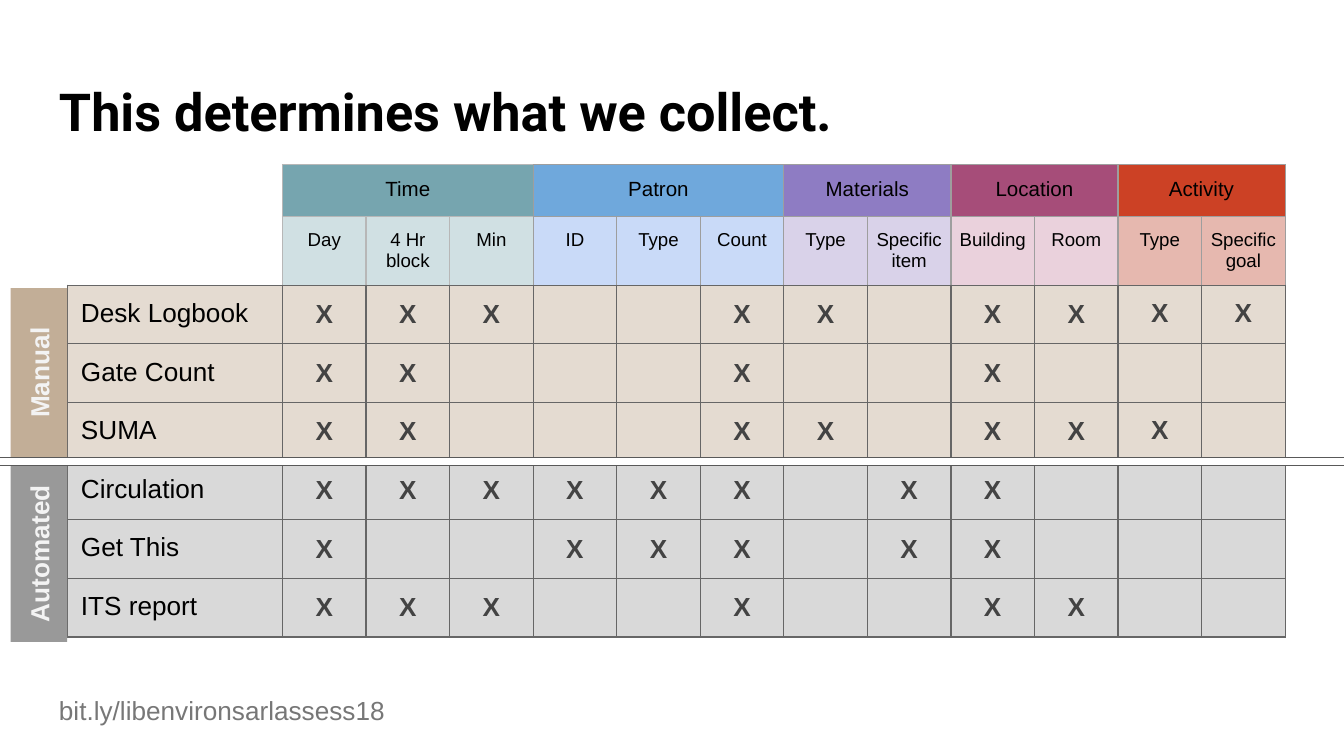
from lxml.etree import SubElement
from pptx import Presentation
from pptx.dml.color import RGBColor as RGB
from pptx.enum.shapes import MSO_SHAPE as Shape
from pptx.enum.text import MSO_ANCHOR as Anchor, PP_ALIGN as Align
from pptx.oxml import parse_xml
from pptx.oxml.ns import nsdecls, qn
from pptx.util import Inches, Pt

COLORS = {
    "black": "000000", "white": "FFFFFF", "mark": "434343", "footer": "777777",
    "tab_text": "F3F3F3", "tan": "B69E83", "gray": "D9D9D9", "dark_gray": "999999",
    "grid": "666666", "header_grid": "9E9E9E", "time_grid": "B7B7B7", "rule": "595959",
    "time": "76A5AF", "time_light": "D0E0E3", "patron": "6FA8DC", "patron_light": "C9DAF8",
    "materials": "8E7CC3", "materials_light": "D9D2E9",
    "location": "A64D79", "location_light": "EAD1DC",
    "activity": "CC4125", "activity_light": "E6B8AF",
}
FORMATS = {
    "title": dict(name="Roboto", size=Pt(28), bold=True, color="black"),
    "footer": dict(name="Arial", size=Pt(14), bold=False, color="footer"),
    "tab": dict(name="Arial", size=Pt(14), bold=True, color="tab_text"),
    "group": dict(name="Arial", size=Pt(11), bold=False, color="black"),
    "field": dict(name="Arial", size=Pt(10), bold=False, color="black"),
    "system": dict(name="Arial", size=Pt(14), bold=False, color="black"),
    "mark": dict(name="Arial", size=Pt(14), bold=True, color="mark"),
}
GROUPS = {
    "Time": ["Day", "4 Hr\nblock", "Min"],
    "Patron": ["ID", "Type", "Count"],
    "Materials": ["Type", "Specific item"],
    "Location": ["Building", "Room"],
    "Activity": ["Type", "Specific goal"],
}
MANUAL, AUTOMATED = ("tan", 37), ("gray", 100)
SYSTEMS = [
    ("Desk Logbook", MANUAL, "XXX..XX.XXXX"),
    ("Gate Count", MANUAL, "XX...X..X..."),
    ("SUMA", MANUAL, "XX...XX.XXX."),
    ("Circulation", AUTOMATED, "XXXXXX.XX..."),
    ("Get This", AUTOMATED, "X..XXX.XX..."),
    ("ITS report", AUTOMATED, "XXX..X..XX.."),
]
FIRST_ACTIVITY = 11
PAD = (0.1, 0.1, 0.1, 0.1)


class Deck:
    """Holds the style and the current slide; lengths are percent of the slide's size."""

    def __init__(self):
        self.prs = Presentation()
        self.prs.slide_width = Inches(10)
        self.prs.slide_height = Inches(10) * 9 // 16
        self.slide = self.prs.slides.add_slide(self.prs.slide_layouts[6])

    def x(self, share):
        return round(self.prs.slide_width * share / 100)

    def y(self, share):
        return round(self.prs.slide_height * share / 100)

    def box(self, left, top, width, height):
        return self.x(left), self.y(top), self.x(width), self.y(height)

    def put_text(self, frame, text, style, align=Align.LEFT):
        frame.text = text
        for paragraph in frame.paragraphs:
            paragraph.alignment = align
            for run in paragraph.runs:
                for key, value in FORMATS[style].items():
                    if key == "color":
                        run.font.color.rgb = RGB.from_string(COLORS[value])
                    else:
                        setattr(run.font, key, value)

    def pad(self, holder, margins):
        for side, margin in zip(("left", "top", "right", "bottom"), margins):
            setattr(holder, f"margin_{side}", Inches(margin))

    def paint(self, holder, properties, color, opacity=100):
        holder.fill.solid()
        holder.fill.fore_color.rgb = RGB.from_string(COLORS[color])
        if opacity < 100:
            tint = next(properties.iter(qn("a:srgbClr")))
            SubElement(tint, qn("a:alpha"), val=str(opacity * 1000))

    def text(self, area, text, style):
        frame = self.slide.shapes.add_textbox(*self.box(*area)).text_frame
        frame.word_wrap = True
        self.pad(frame, PAD)
        self.put_text(frame, text, style)

    def bar(self, area, color, opacity=100, line=None):
        bar = self.slide.shapes.add_shape(Shape.RECTANGLE, *self.box(*area))
        bar.shadow.inherit = False
        self.paint(bar, bar._element.spPr, color, opacity)
        if line:
            bar.line.color.rgb = RGB.from_string(COLORS[line])
            bar.line.width = Pt(0.75)
        else:
            bar.line.fill.background()
        return bar

    def side_tab(self, area, text, color, opacity=100):
        """Draw a label reading upwards; area is where it shows after turning."""
        tab = self.bar(area, color, opacity)
        middle_x, middle_y = tab.left + tab.width // 2, tab.top + tab.height // 2
        tab.width, tab.height = tab.height, tab.width
        tab.left, tab.top = middle_x - tab.width // 2, middle_y - tab.height // 2
        tab.rotation = 270
        tab.text_frame.vertical_anchor = Anchor.MIDDLE
        self.pad(tab.text_frame, PAD)
        self.put_text(tab.text_frame, text, "tab", Align.CENTER)

    def table(self, left, top, columns, rows):
        area = self.box(left, top, sum(columns), sum(rows))
        table = self.slide.shapes.add_table(len(rows), len(columns), *area).table
        table.first_row = table.horz_banding = False
        for column, share in zip(table.columns, columns):
            column.width = self.x(share)
        for row, share in zip(table.rows, rows):
            row.height = self.y(share)
        return table

    def cell(self, cell, borders, fill=None, text="", style=None, align=Align.CENTER,
             margins=PAD, anchor=Anchor.TOP):
        """Style one cell; borders are colours for left, right, top and bottom."""
        properties = cell._tc.get_or_add_tcPr()
        # Empty cells keep no padding, so that they never stretch their row.
        self.pad(cell, margins if text else (0, 0, 0, 0))
        cell.vertical_anchor = anchor
        if fill:
            self.paint(cell, properties, *fill)
        else:
            cell.fill.background()
        for place, (side, color) in enumerate(zip("LRTB", borders)):
            properties.insert(place, parse_xml(
                f'<a:ln{side} {nsdecls("a")} w="9525"><a:solidFill>'
                f'<a:srgbClr val="{COLORS[color]}"/></a:solidFill></a:ln{side}>'))
        if text:
            self.put_text(cell.text_frame, text, style, align)


def add_headings(deck, table):
    for row, bottom in enumerate(("white", "grid")):
        deck.cell(table.cell(row, 0), ("white", "time_grid", "white", bottom))
    column = 1
    for group, fields in GROUPS.items():
        key = group.lower()
        edge = "time_grid" if group == "Time" else "header_grid"
        table.cell(0, column).merge(table.cell(0, column + len(fields) - 1))
        for offset, field in enumerate(fields):
            deck.cell(table.cell(0, column + offset), (edge,) * 4, (key,),
                      "" if offset else group, "group")
            deck.cell(table.cell(1, column + offset), (edge, edge, edge, "grid"),
                      (key + "_light",), field, "field", margins=(0, 0.1, 0, 0))
        column += len(fields)


def add_systems(deck, table):
    borders = ("grid",) * 4
    for row, (system, fill, marks) in enumerate(SYSTEMS, 2):
        deck.cell(table.cell(row, 0), borders, fill, system, "system", Align.LEFT)
        for column, mark in enumerate(marks, 1):
            anchor = Anchor.TOP if column >= FIRST_ACTIVITY else Anchor.MIDDLE
            deck.cell(table.cell(row, column), borders, fill, mark.strip("."), "mark",
                      anchor=anchor)


def main():
    deck = Deck()
    deck.text((3.4, 8.7, 93.2, 11.2), "This determines what we collect.", "title")
    field_count = sum(map(len, GROUPS.values()))
    table = deck.table(5.02, 21.8, [16] + [6.22] * field_count,
                       [6.6, 9.1] + [7.76] * len(SYSTEMS))
    add_headings(deck, table)
    add_systems(deck, table)
    deck.side_tab((0.8, 61.6, 4.2, 23.3), "Automated", "dark_gray")
    deck.side_tab((0.8, 38.1, 4.2, 22.4), "Manual", "tan", 83)
    deck.bar((-10, 60.5, 114.5, 1.1), "white", line="rule")
    deck.text((3.4, 90.1, 56.9, 6.4), "bit.ly/libenvironsarlassess18", "footer")
    deck.prs.save("out.pptx")


if __name__ == "__main__":
    main()
